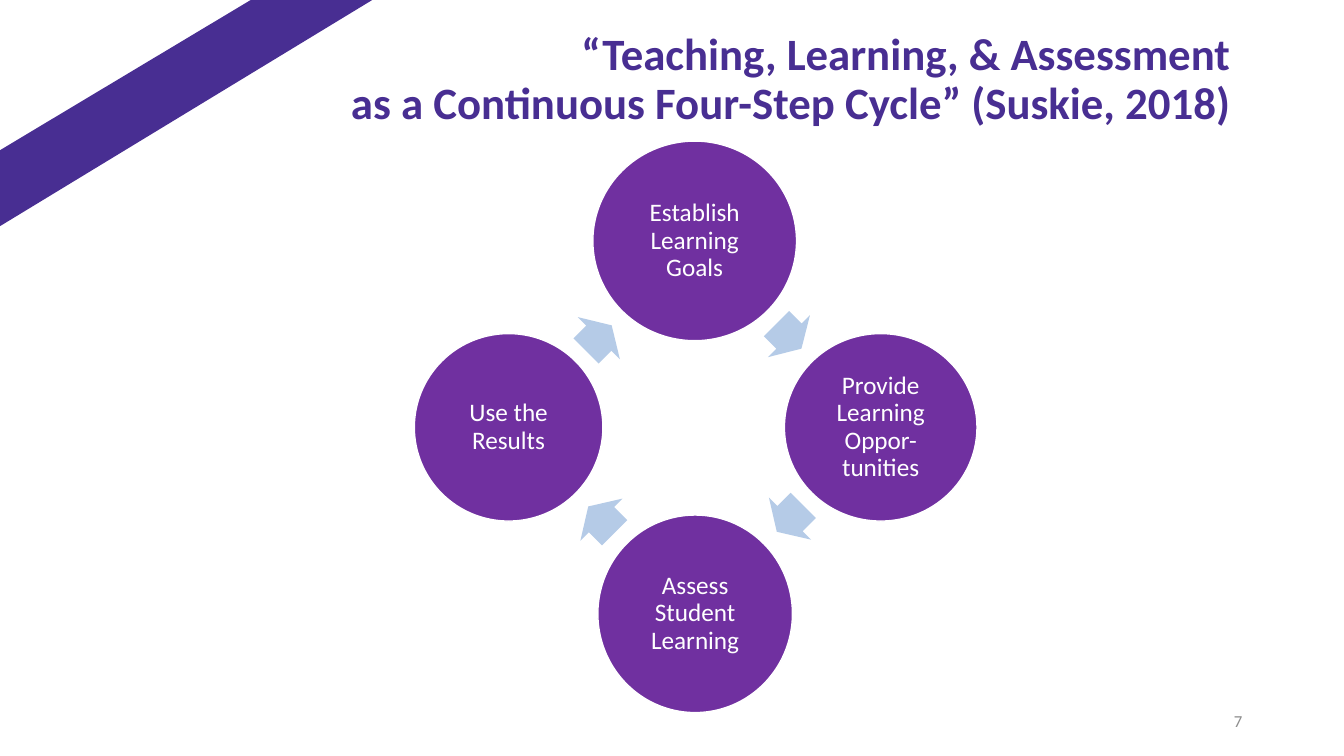
from dataclasses import dataclass

from pptx import Presentation
from pptx import util as u
from pptx.dml.color import RGBColor
from pptx.enum import shapes, text


@dataclass(frozen=True)
class Theme:
    font: str = "Calibri"
    indigo: str = "482E92"
    purple: str = "7030A0"
    arrow: str = "B5CBE7"
    white: str = "FFFFFF"
    gray: str = "8C8C8C"
    title_size: int = 32
    step_size: int = 18
    number_size: int = 12


THEME = Theme()

STEPS = [
    ("Establish Learning Goals", (5.88, 1.40, 2.02, 1.98), (7.65, 3.04, 0.35, 0.59)),
    ("Provide Learning Oppor-tunities", (7.78, 3.31, 1.91, 1.86), (7.65, 4.85, 0.37, 0.59)),
    ("Assess Student Learning", (5.93, 5.11, 1.93, 1.96), (5.78, 4.86, 0.37, 0.59)),
    ("Use the Results", (4.11, 3.31, 1.87, 1.86), (5.76, 3.06, 0.36, 0.59)),
]

BAND = [(-0.1, 1.55), (2.67, -0.11), (3.37, -0.11), (3.84, -0.09), (-0.11, 2.31)]


def inches(box):
    return [u.Inches(value) for value in box]


def paint(shape, fill, line=None):
    shape.shadow.inherit = False
    shape.fill.solid()
    shape.fill.fore_color.rgb = RGBColor.from_string(fill)
    if line:
        shape.line.color.rgb = RGBColor.from_string(line)
        shape.line.width = u.Pt(1)
    else:
        shape.line.fill.background()


def write(shape, content, size, color, bold=False, align=text.PP_ALIGN.RIGHT,
          anchor=text.MSO_ANCHOR.MIDDLE, spacing=1.0, insets=(0.1, 0.05, 0.1, 0.05)):
    frame = shape.text_frame
    frame.word_wrap = True
    frame.vertical_anchor = anchor
    (frame.margin_left, frame.margin_top,
     frame.margin_right, frame.margin_bottom) = inches(insets)
    paragraph = frame.paragraphs[0]
    paragraph.text = content
    paragraph.alignment = align
    paragraph.line_spacing = spacing
    for run in paragraph.runs:
        run.font.name = THEME.font
        run.font.size = u.Pt(size)
        run.font.bold = bold
        run.font.color.rgb = RGBColor.from_string(color)


def add_band(slide):
    points = [inches(point) for point in BAND]
    builder = slide.shapes.build_freeform(*points[0])
    builder.add_line_segments(points[1:], close=True)
    paint(builder.convert_to_shape(), THEME.indigo)


def add_step(slide, label, box):
    circle = slide.shapes.add_shape(shapes.MSO_SHAPE.OVAL, *inches(box))
    paint(circle, THEME.purple, THEME.white)
    write(circle, label, THEME.step_size, THEME.white,
          align=text.PP_ALIGN.CENTER, spacing=0.9, insets=(0.03,) * 4)


def add_arrow(slide, box, rotation):
    arrow = slide.shapes.add_shape(shapes.MSO_SHAPE.RIGHT_ARROW, *inches(box))
    arrow.adjustments[0] = 0.6
    arrow.adjustments[1] = 0.5
    arrow.rotation = rotation
    paint(arrow, THEME.arrow)


def main():
    presentation = Presentation()
    presentation.slide_width = u.Inches(13.33)
    presentation.slide_height = u.Inches(7.5)
    slide = presentation.slides.add_slide(presentation.slide_layouts[6])

    add_band(slide)
    number = slide.shapes.add_textbox(*inches((9.42, 6.95, 3, 0.4)))
    write(number, "7", THEME.number_size, THEME.gray)
    title = slide.shapes.add_textbox(*inches((0.6, 0.27, 11.81, 0.74)))
    write(title,
          "“Teaching, Learning, & Assessment\vas a Continuous Four-Step Cycle” (Suskie, 2018)",
          THEME.title_size, THEME.indigo, bold=True, anchor=text.MSO_ANCHOR.TOP,
          spacing=0.9, insets=(0.1, 0.05, 0.2, 0.05))

    for index, (label, circle_box, arrow_box) in enumerate(STEPS):
        add_step(slide, label, circle_box)
        add_arrow(slide, arrow_box, 45 + 90 * index)

    presentation.save("out.pptx")


if __name__ == "__main__":
    main()
